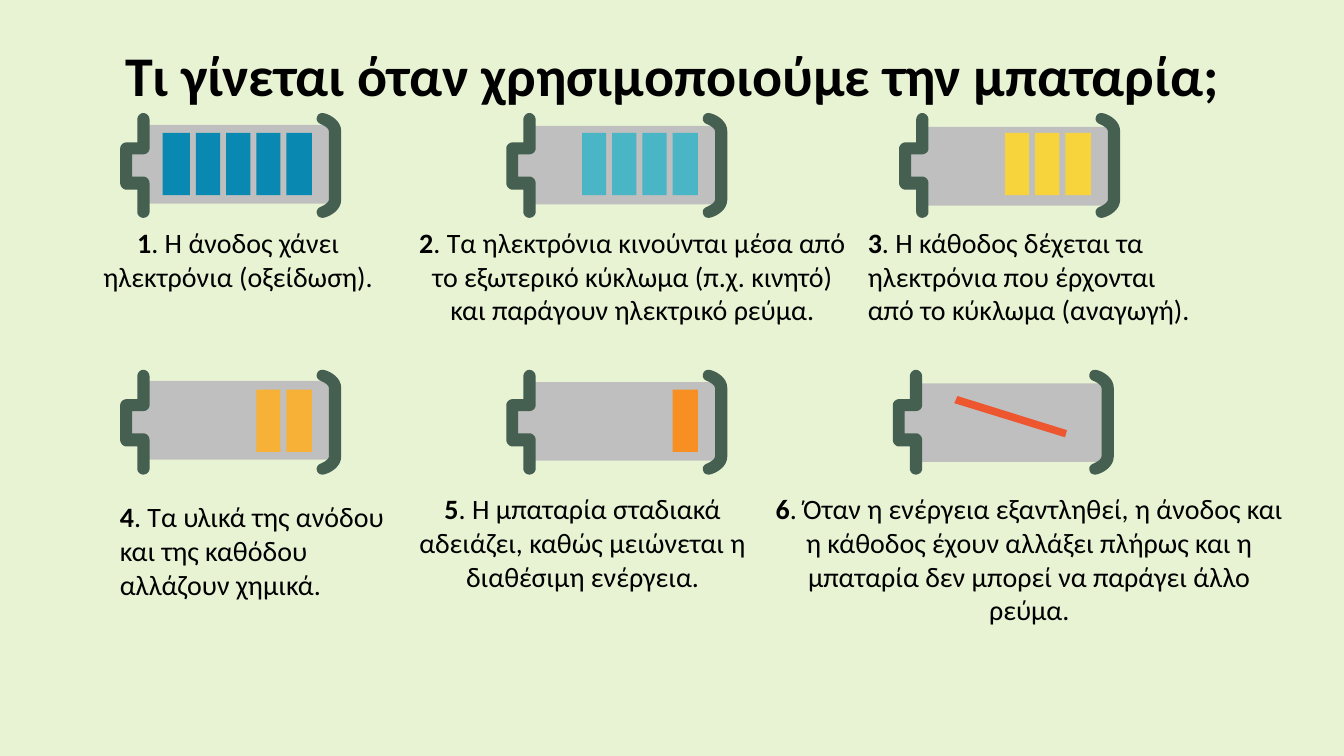
"""Build the slide that shows a battery running down in six steps."""
from dataclasses import dataclass

from pptx import Presentation
from pptx.dml.color import RGBColor
from pptx.enum.shapes import MSO_SHAPE as Preset
from pptx.enum.text import MSO_AUTO_SIZE as AutoSize, PP_ALIGN as Align
from pptx.shapes.autoshape import Shape
from pptx.shapes.shapetree import SlideShapes
from pptx.util import Cm, Pt

Point = tuple[float, float]
Segment = tuple[Point, ...]
Box = tuple[float, float, float, float]

BACKGROUND = RGBColor(0xE8, 0xF3, 0xD4)
BLACK = RGBColor(0x00, 0x00, 0x00)
CASING = RGBColor(0xBF, 0xBF, 0xBF)
FRAME = RGBColor(0x45, 0x5F, 0x51)
BLUE = RGBColor(0x09, 0x89, 0xB1)
TEAL = RGBColor(0x4A, 0xB5, 0xC4)
YELLOW = RGBColor(0xF7, 0xD3, 0x3C)
AMBER = RGBColor(0xF7, 0xB1, 0x36)
ORANGE = RGBColor(0xF7, 0x8F, 0x23)
RED = RGBColor(0xED, 0x56, 0x2E)

TOP_ROW, BOTTOM_ROW = 2.85, 9.32
CURVE_STEPS = 8
CELL_TOP, CELL_HEIGHT = 0.5, 1.57
CELLS = ((4.19, 0.64), (3.43, 0.61), (2.67, 0.61), (1.91, 0.61), (1.07, 0.69))

BODY: list[Segment] = [
    ((0.45, 0),), ((0.45, 0.54),), ((0, 0.54),), ((0, 1.44),),
    ((0.45, 1.44),), ((0.45, 1.98),), ((5.16, 1.98),), ((5.16, 0),),
]
TERMINAL: list[Segment] = [
    ((0.58, 0),), ((0.5, 0), (0.43, 0.08), (0.43, 0.17)),
    ((0.43, 0.74),), ((0.15, 0.74),), ((0.08, 0.74), (0, 0.81), (0, 0.89)),
    ((0, 1.77),), ((0, 1.85), (0.08, 1.93), (0.15, 1.93)),
    ((0.43, 1.93),), ((0.43, 2.49),),
    ((0.43, 2.57), (0.5, 2.64), (0.58, 2.64)),
    ((0.67, 2.64), (0.74, 2.57), (0.74, 2.49)),
    ((0.74, 1.77),), ((0.74, 1.68), (0.67, 1.6), (0.58, 1.6)),
    ((0.3, 1.6),), ((0.3, 1.04),), ((0.58, 1.04),),
    ((0.67, 1.04), (0.74, 0.97), (0.74, 0.89)),
    ((0.74, 0.17),), ((0.74, 0.08), (0.67, 0), (0.58, 0)),
]
END_CAP: list[Segment] = [
    ((5.11, 0),), ((5.03, 0), (4.98, 0.03), (4.96, 0.1)),
    ((4.93, 0.18), (4.98, 0.25), (5.06, 0.28)),
    ((5.06, 0.28), (5.26, 0.36), (5.26, 0.46)),
    ((5.26, 2.18),), ((5.26, 2.28), (5.06, 2.36), (5.06, 2.36)),
    ((4.98, 2.39), (4.93, 2.46), (4.96, 2.54)),
    ((4.98, 2.61), (5.03, 2.64), (5.11, 2.64)), ((5.16, 2.63),),
    ((5.31, 2.59), (5.57, 2.44), (5.57, 2.18)),
    ((5.57, 0.46),), ((5.57, 0.2), (5.31, 0.05), (5.16, 0.01)),
]
EMPTY_MARK: list[Segment] = [
    ((1.63, 0.66),), ((1.55, 0.84),), ((4.34, 1.7),), ((4.39, 1.52),),
]


@dataclass(frozen=True)
class Step:
    """One numbered stage: its battery and its caption."""
    left: float
    top: float
    body_shift: Point
    charge: int
    color: RGBColor
    caption_box: Box
    caption: str
    align: Align = Align.CENTER


STEPS = [
    Step(3.03, TOP_ROW, (0.2, 0.3), 5, BLUE, (2.21, 5.56, 7.59, 2.82),
         "Η άνοδος χάνει ηλεκτρόνια (οξείδωση)."),
    Step(12.76, TOP_ROW, (0.18, 0.32), 4, TEAL, (10.24, 5.56, 11.4, 2.82),
         "Τα ηλεκτρόνια κινούνται μέσα από το εξωτερικό κύκλωμα "
         "(π.χ. κινητό) και παράγουν ηλεκτρικό ρεύμα."),
    Step(22.66, TOP_ROW, (0.2, 0.35), 3, YELLOW, (21.62, 5.56, 8.92, 2.82),
         "Η κάθοδος δέχεται τα ηλεκτρόνια που έρχονται από το κύκλωμα "
         "(αναγωγή).", Align.LEFT),
    Step(3.03, BOTTOM_ROW, (0.15, 0.28), 2, AMBER, (2.77, 12.47, 7.98, 2.82),
         "Τα υλικά της ανόδου και της καθόδου αλλάζουν χημικά.", Align.LEFT),
    Step(12.76, BOTTOM_ROW, (0.17, 0.31), 1, ORANGE, (9.58, 12.27, 10.21, 3.68),
         "Η μπαταρία σταδιακά αδειάζει, καθώς μειώνεται η διαθέσιμη ενέργεια."),
    Step(22.5, BOTTOM_ROW, (0.15, 0.34), 0, RED, (19.08, 12.27, 13.72, 4.52),
         "Όταν η ενέργεια εξαντληθεί, η άνοδος και η κάθοδος έχουν αλλάξει "
         "πλήρως και η μπαταρία δεν μπορεί να παράγει άλλο ρεύμα."),
]


def flatten(outline: list[Segment]) -> list[Point]:
    """Turn lines and cubic curves into a list of points."""
    points: list[Point] = []
    for segment in outline:
        if len(segment) == 1:
            points.append(segment[0])
            continue
        controls = (points[-1], *segment)
        for step in range(1, CURVE_STEPS + 1):
            t = step / CURVE_STEPS
            weights = ((1 - t) ** 3, 3 * t * (1 - t) ** 2, 3 * t * t * (1 - t), t ** 3)
            x, y = (sum(w * c[axis] for w, c in zip(weights, controls)) for axis in (0, 1))
            points.append((x, y))
    return points


def paint(shape: Shape, color: RGBColor) -> None:
    """Give a shape a flat fill without line or shadow."""
    shape.shadow.inherit = False
    shape.fill.solid()
    shape.fill.fore_color.rgb = color
    shape.line.fill.background()


def draw_outline(shapes: SlideShapes, outline: list[Segment], left: float,
                 top: float, color: RGBColor) -> None:
    """Draw a closed outline shifted to the given corner."""
    start, *others = [(Cm(left + x), Cm(top + y)) for x, y in flatten(outline)]
    builder = shapes.build_freeform(*start)
    builder.add_line_segments(others, close=True)
    paint(builder.convert_to_shape(), color)


def draw_battery(shapes: SlideShapes, step: Step) -> None:
    """Draw the battery of one step with its remaining charge."""
    shift_x, shift_y = step.body_shift
    draw_outline(shapes, BODY, step.left + shift_x, step.top + shift_y, CASING)
    for part in (TERMINAL, END_CAP):
        draw_outline(shapes, part, step.left, step.top, FRAME)
    for cell_left, cell_width in CELLS[:step.charge]:
        cell = shapes.add_shape(
            Preset.RECTANGLE, Cm(step.left + cell_left), Cm(step.top + CELL_TOP),
            Cm(cell_width), Cm(CELL_HEIGHT))
        paint(cell, step.color)
    if not step.charge:
        draw_outline(shapes, EMPTY_MARK, step.left, step.top, step.color)


def write_text(shapes: SlideShapes, box: Box, size: int, align: Align,
               bold_text: str, plain_text: str = "") -> None:
    """Write a paragraph that opens in bold."""
    frame = shapes.add_textbox(*map(Cm, box)).text_frame
    frame.word_wrap = True
    frame.auto_size = AutoSize.SHAPE_TO_FIT_TEXT
    paragraph = frame.paragraphs[0]
    paragraph.alignment = align
    for text, bold in ((bold_text, True), (plain_text, False)):
        if text:
            run = paragraph.add_run()
            run.text = text
            font_format = {"name": "Calibri", "size": Pt(size), "bold": bold}
            for attribute, value in font_format.items():
                setattr(run.font, attribute, value)
            run.font.color.rgb = BLACK


def main() -> None:
    """Build and save the presentation."""
    deck = Presentation()
    deck.slide_width, deck.slide_height = Cm(33.87), Cm(19.05)
    slide = deck.slides.add_slide(deck.slide_layouts[6])
    slide.background.fill.solid()
    slide.background.fill.fore_color.rgb = BACKGROUND
    write_text(slide.shapes, (0, 0.89, 33.87, 1.96), 40, Align.CENTER,
               "Τι γίνεται όταν χρησιμοποιούμε την μπαταρία;")
    for step in STEPS:
        draw_battery(slide.shapes, step)
    for number, step in enumerate(STEPS, start=1):
        write_text(slide.shapes, step.caption_box, 20, step.align,
                   str(number), f". {step.caption}")
    deck.save("out.pptx")


if __name__ == "__main__":
    main()
